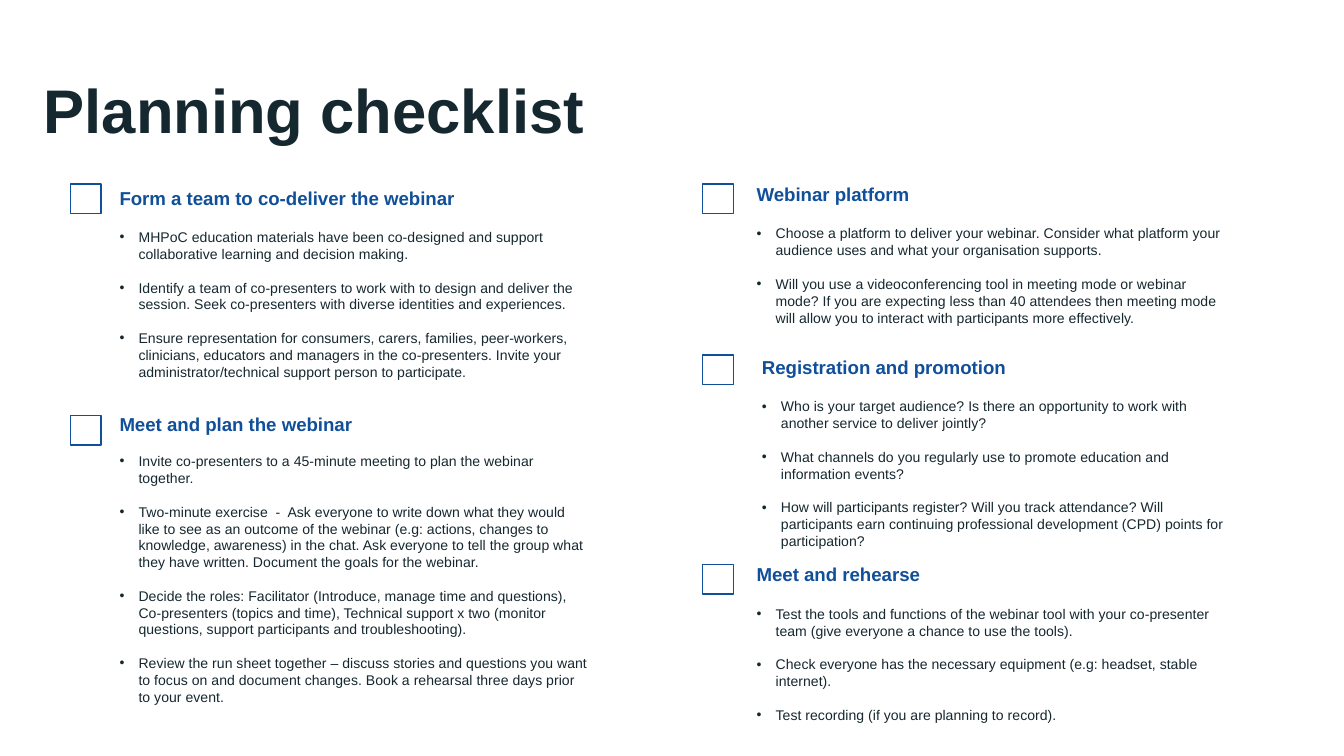
from lxml.etree import SubElement
from pptx import Presentation
from pptx.dml.color import RGBColor
from pptx.enum.shapes import MSO_SHAPE
from pptx.enum.text import MSO_ANCHOR
from pptx.oxml.ns import qn
from pptx.util import Cm, Pt

BLUE = "104F99"
INK = "15272F"
LEFT_CHECK, RIGHT_CHECK = 1.33, 13.28

# Checkbox left and top, text left, top, width and height (cm),
# gap under the heading (pt), heading, items
SECTIONS = [
    (LEFT_CHECK, 3.48, 2.01, 3.4, 9.3, 4.27, 10.6, "Form a team to co-deliver the webinar", [
        "MHPoC education materials have been co-designed and support collaborative "
        "learning and decision making.",
        "Identify a team of co-presenters to work with to design and deliver the session. "
        "Seek co-presenters with diverse identities and experiences.",
        "Ensure representation for consumers, carers, families, peer-workers, clinicians, "
        "educators and managers in the co-presenters. Invite your administrator/technical "
        "support person to participate.",
    ]),
    (LEFT_CHECK, 7.85, 2.01, 7.67, 9.37, 5.54, 9.6, "Meet and plan the webinar", [
        "Invite co-presenters to a 45-minute meeting to plan the webinar together.",
        "Two-minute exercise  -  Ask everyone to write down what they would like to see as "
        "an outcome of the webinar (e.g: actions, changes to knowledge, awareness) in the "
        "chat. Ask everyone to tell the group what they have written. Document the goals "
        "for the webinar.",
        "Decide the roles: Facilitator (Introduce, manage time and questions), "
        "Co-presenters (topics and time), Technical support x two (monitor questions, "
        "support participants and troubleshooting).",
        "Review the run sheet together – discuss stories and questions you want to focus "
        "on and document changes. Book a rehearsal three days prior to your event.",
    ]),
    (RIGHT_CHECK, 3.48, 14.05, 3.33, 9.45, 3, 10.6, "Webinar platform", [
        "Choose a platform to deliver your webinar. Consider what platform your audience "
        "uses and what your organisation supports.",
        "Will you use a videoconferencing tool in meeting mode or webinar mode? If you are "
        "expecting less than 40 attendees then meeting mode will allow you to interact "
        "with participants more effectively.",
    ]),
    (RIGHT_CHECK, 6.71, 14.15, 6.6, 9.45, 3.63, 10.6, "Registration and promotion", [
        "Who is your target audience? Is there an opportunity to work with another service "
        "to deliver jointly?",
        "What channels do you regularly use to promote education and information events?",
        "How will participants register? Will you track attendance? Will participants earn "
        "continuing professional development (CPD) points for participation?",
    ]),
    (RIGHT_CHECK, 10.67, 14.05, 10.52, 9.65, 3.66, 10.6, "Meet and rehearse", [
        "Test the tools and functions of the webinar tool with your co-presenter team "
        "(give everyone a chance to use the tools).",
        "Check everyone has the necessary equipment (e.g: headset, stable internet).",
        "Test recording (if you are planning to record).",
    ]),
]


def color(value):
    return RGBColor.from_string(value)


class ChecklistSlide:
    font_name = "Arial"
    title_size, heading_size, item_size = 33, 10, 7.5
    item_gap = 9
    bullet_indent = Cm(0.36)

    def __init__(self, slide):
        self.slide = slide

    def add_run(self, paragraph, text, size, ink, bold=False):
        run = paragraph.add_run()
        run.text = text
        run.font.name = self.font_name
        run.font.size = Pt(size)
        run.font.bold = bold
        run.font.color.rgb = color(ink)

    def add_text_frame(self, left, top, width, height):
        shape = self.slide.shapes.add_textbox(Cm(left), Cm(top), Cm(width), Cm(height))
        shape.text_frame.word_wrap = True
        return shape.text_frame

    def add_title(self, text):
        frame = self.add_text_frame(0.58, 0.76, 24.33, 2.77)
        frame.vertical_anchor = MSO_ANCHOR.MIDDLE
        paragraph = frame.paragraphs[0]
        paragraph.line_spacing = 0.9
        self.add_run(paragraph, text, self.title_size, INK, bold=True)

    def add_checkbox(self, left, top):
        shape = self.slide.shapes.add_shape(
            MSO_SHAPE.RECTANGLE, Cm(left), Cm(top), Cm(0.58), Cm(0.56))
        shape.shadow.inherit = False
        shape.fill.background()
        shape.line.color.rgb = color(BLUE)
        shape.line.width = Pt(0.75)

    def add_item(self, frame, text, gap):
        paragraph = frame.add_paragraph()
        paragraph.space_before = Pt(gap)
        properties = paragraph._p.get_or_add_pPr()
        properties.set("marL", str(self.bullet_indent))
        properties.set("indent", str(-self.bullet_indent))
        SubElement(properties, qn("a:buFont"), typeface=self.font_name)
        SubElement(properties, qn("a:buChar"), char="•")
        self.add_run(paragraph, text, self.item_size, INK)

    def add_section(self, left, top, width, height, heading_gap, heading, items):
        frame = self.add_text_frame(left, top, width, height)
        self.add_run(frame.paragraphs[0], heading, self.heading_size, BLUE, bold=True)
        for index, item in enumerate(items):
            self.add_item(frame, item, self.item_gap if index else heading_gap)


def main():
    presentation = Presentation()
    presentation.slide_width = Cm(25.4)
    presentation.slide_height = Cm(14.29)
    checklist = ChecklistSlide(presentation.slides.add_slide(presentation.slide_layouts[6]))
    checklist.add_title("Planning checklist")
    for check_left, check_top, *section in SECTIONS:
        checklist.add_checkbox(check_left, check_top)
        checklist.add_section(*section)
    presentation.save("out.pptx")


if __name__ == "__main__":
    main()
